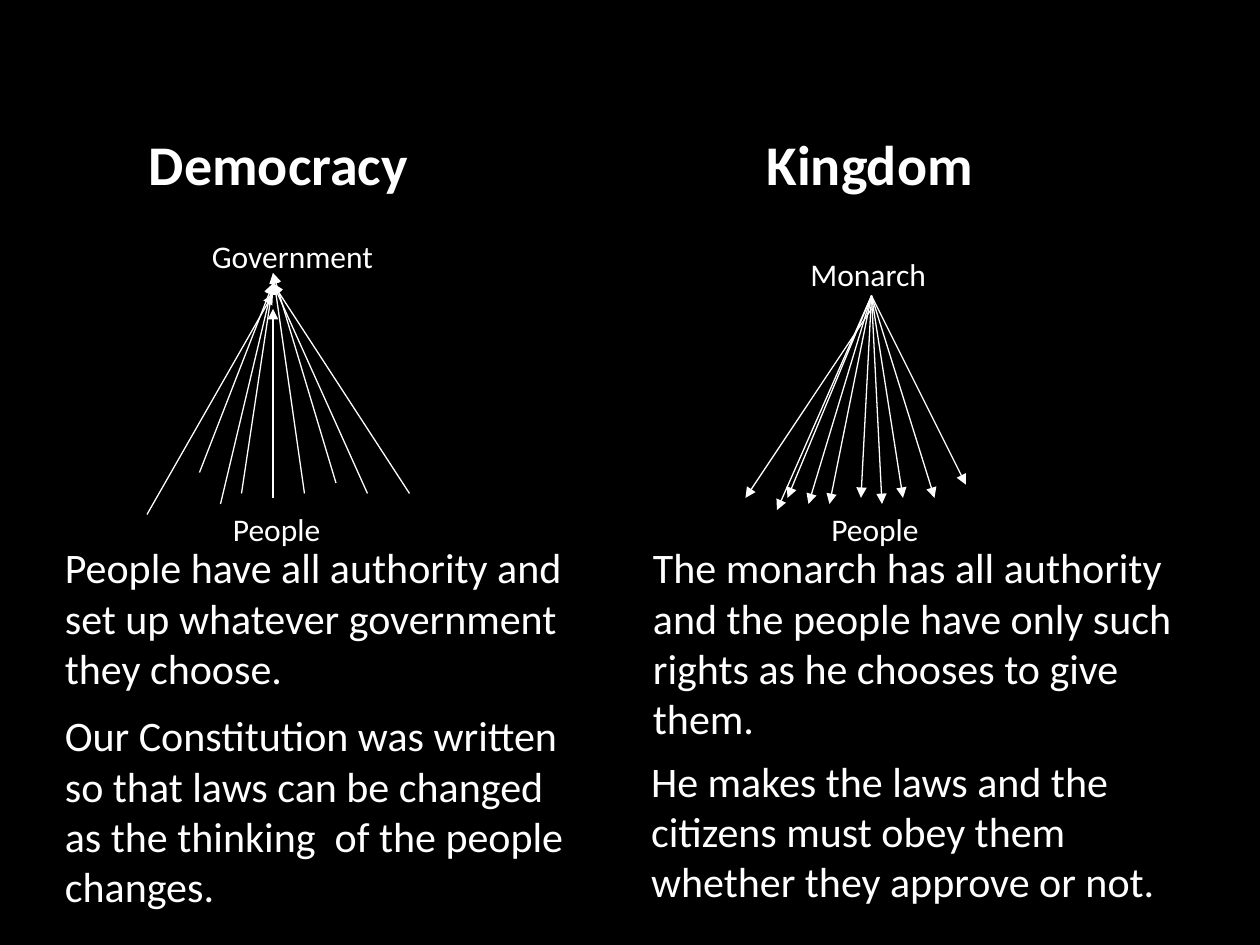
from lxml import etree
from pptx import Presentation
from pptx.dml.color import RGBColor
from pptx.enum import shapes
from pptx.oxml import ns
from pptx.util import Pt

COLORS = {"background": "000000", "foreground": "FFFFFF"}
FONT = "Calibri"
HEADING, LABEL, BODY = 32, 18, 24

# Text: left, top, width, height, size, wording
TEXTS = [
    # Democracy
    (78, 70.5, 207, 46, HEADING, "Democracy"),
    (114, 132, 138, 29, LABEL, "Government"),
    (126, 288, 84, 29, LABEL, "People"),
    (30, 306, 318, 127, BODY,
     "People have all authority and set up whatever government they choose."),
    (30, 402, 312, 127, BODY,
     "Our Constitution was written so that laws can be changed "
     "as the thinking  of the people changes."),
    # Kingdom
    (431, 70.5, 204, 46, HEADING, "Kingdom"),
    (456, 142, 120, 29, LABEL, "Monarch"),
    (468, 288, 108, 29, LABEL, "People"),
    (366, 306, 317, 124, BODY,
     "The monarch has all authority and the people have only such rights "
     "as he chooses to give them."),
    (365, 428, 331, 94, BODY,
     "He makes the laws and the citizens must obey them "
     "whether they approve or not."),
]

# Arrows rise from the people to the government: start x, start y, tip y
GOVERNMENT_X = 156
RISING = [
    (84, 294, 168), (126, 288, 162), (138, 282, 162), (174, 282, 156),
    (192, 276, 156), (210, 282, 162), (114, 270, 162), (234, 282, 162),
    (156, 284.5, 176.5),
]

# Arrows fall from the monarch to the people: start y, tip x, tip y
MONARCH_X = 498
FALLING = [
    (176.5, 426, 284.5), (169, 444, 291.5), (169, 450, 284.5),
    (169, 462, 288), (169, 474, 288), (169, 492, 284.5), (169, 504, 288),
    (169, 534, 284.5), (169, 516, 284.5), (169, 552, 277),
]


def color(name):
    return RGBColor.from_string(COLORS[name])


def add_text(slide, left, top, width, height, size, wording):
    box = slide.shapes.add_textbox(Pt(left), Pt(top), Pt(width), Pt(height))
    text_frame = box.text_frame
    text_frame.word_wrap = True
    text_frame.text = wording
    font = text_frame.paragraphs[0].runs[0].font
    font.name = FONT
    font.size = Pt(size)
    font.bold = size == HEADING
    font.color.rgb = color("foreground")


def add_arrow(slide, start_x, start_y, tip_x, tip_y):
    arrow = slide.shapes.add_connector(
        shapes.MSO_CONNECTOR.STRAIGHT,
        Pt(start_x), Pt(start_y), Pt(tip_x), Pt(tip_y))
    arrow.line.color.rgb = color("foreground")
    arrow.line.width = Pt(0.75)
    # Arrowhead at the tip, and no shadow
    line = arrow.line._get_or_add_ln()
    etree.SubElement(line, ns.qn("a:tailEnd"), type="triangle")
    etree.SubElement(arrow._element.spPr, ns.qn("a:effectLst"))


def main():
    presentation = Presentation()
    presentation.slide_width, presentation.slide_height = Pt(720), Pt(540)
    slide = presentation.slides.add_slide(presentation.slide_layouts[6])
    slide.background.fill.solid()
    slide.background.fill.fore_color.rgb = color("background")

    # Headings, labels and explanations
    for entry in TEXTS:
        add_text(slide, *entry)

    # Where authority comes from
    for start_x, start_y, tip_y in RISING:
        add_arrow(slide, start_x, start_y, GOVERNMENT_X, tip_y)
    for start_y, tip_x, tip_y in FALLING:
        add_arrow(slide, MONARCH_X, start_y, tip_x, tip_y)

    presentation.save("out.pptx")


if __name__ == "__main__":
    main()
